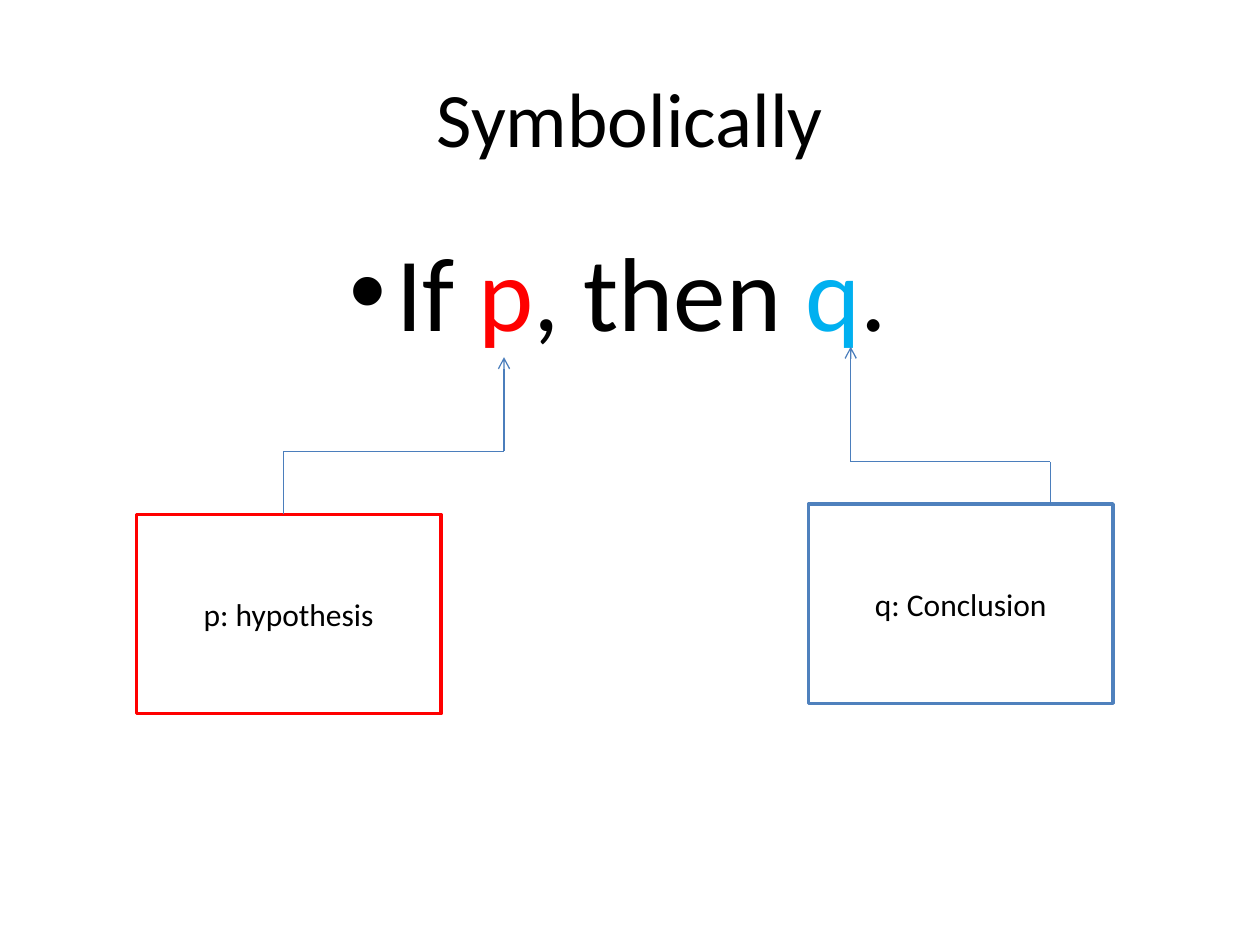
"""Build the slide that names the parts of an if-then statement."""
from lxml import etree
from pptx import Presentation
from pptx.dml.color import RGBColor
from pptx.enum.shapes import MSO_CONNECTOR as Link, MSO_SHAPE as Shape
from pptx.enum.text import MSO_ANCHOR as Anchor, PP_ALIGN as Align
from pptx.oxml.ns import qn
from pptx.util import Cm, Pt

BLACK, WHITE, RED, SKY, BLUE, LINK = "000000", "FFFFFF", "FF0000", "00B0F0", "4F81BD", "4B7EBC"

TITLE = [("Symbolically", BLACK)]
STATEMENT = [("If ", BLACK), ("p", RED), (", then ", BLACK), ("q", SKY), (". ", BLACK)]
BOX_SIZE = (6.14, 4.02)
PARTS = [
    {"text": "p: hypothesis", "edge": RED, "corner": (2.75, 10.37),
     "start": 5.72, "bend": 9.1, "tip": (10.16, 7.2)},
    {"text": "q: Conclusion", "edge": BLUE, "corner": (16.3, 10.16),
     "start": 21.17, "bend": 9.31, "tip": (17.15, 6.99)},
]


def color(value):
    return RGBColor.from_string(value)


def assign(target, values):
    for name, value in values.items():
        setattr(target, name, value)


def write(shape, spans, size, anchor):
    frame = shape.text_frame
    assign(frame, {"word_wrap": True, "vertical_anchor": anchor})
    para = frame.paragraphs[0]
    para.alignment = Align.CENTER
    for text, shade in spans:
        span = para.add_run()
        span.text = text
        assign(span.font, {"name": "Calibri", "size": Pt(size)})
        span.font.color.rgb = color(shade)
    return para


def add_text(page, place, spans, size, anchor):
    return write(page.shapes.add_textbox(*map(Cm, place)), spans, size, anchor)


def add_bullet(para):
    para.space_before = Pt(3.6)
    props = para._p.get_or_add_pPr()
    props.set("marL", str(Cm(0.95)))
    props.set("indent", str(-Cm(0.95)))
    font = etree.SubElement(props, qn("a:buFont"))
    font.set("typeface", "Arial")
    etree.SubElement(props, qn("a:buChar")).set("char", "•")


def add_line(page, start, end, arrow=False):
    line = page.shapes.add_connector(Link.STRAIGHT, *map(Cm, start + end))
    line.line.color.rgb = color(LINK)
    line.line.width = Pt(0.75)
    if arrow:
        etree.SubElement(line.line._get_or_add_ln(), qn("a:tailEnd")).set("type", "arrow")
    etree.SubElement(line._element.spPr, qn("a:effectLst"))


def add_part(page, part):
    box = page.shapes.add_shape(Shape.RECTANGLE, *map(Cm, part["corner"] + BOX_SIZE))
    box.shadow.inherit = False
    box.fill.solid()
    box.fill.fore_color.rgb = color(WHITE)
    box.line.color.rgb = color(part["edge"])
    box.line.width = Pt(2)
    write(box, [(part["text"], BLACK)], 18, Anchor.MIDDLE)
    start, bend, tip = part["start"], part["bend"], part["tip"]
    add_line(page, (start, part["corner"][1]), (start, bend))
    add_line(page, (start, bend), (tip[0], bend))
    add_line(page, (tip[0], bend), tip, arrow=True)


def main():
    deck = Presentation()
    assign(deck, {"slide_width": Cm(25.4), "slide_height": Cm(19.05)})
    page = deck.slides.add_slide(deck.slide_layouts[6])
    add_text(page, (1.27, 0.76, 22.86, 3.18), TITLE, 44, Anchor.MIDDLE)
    add_bullet(add_text(page, (1.27, 4.45, 22.86, 12.57), STATEMENT, 60, Anchor.TOP))
    for part in PARTS:
        add_part(page, part)
    deck.save("out.pptx")


if __name__ == "__main__":
    main()
